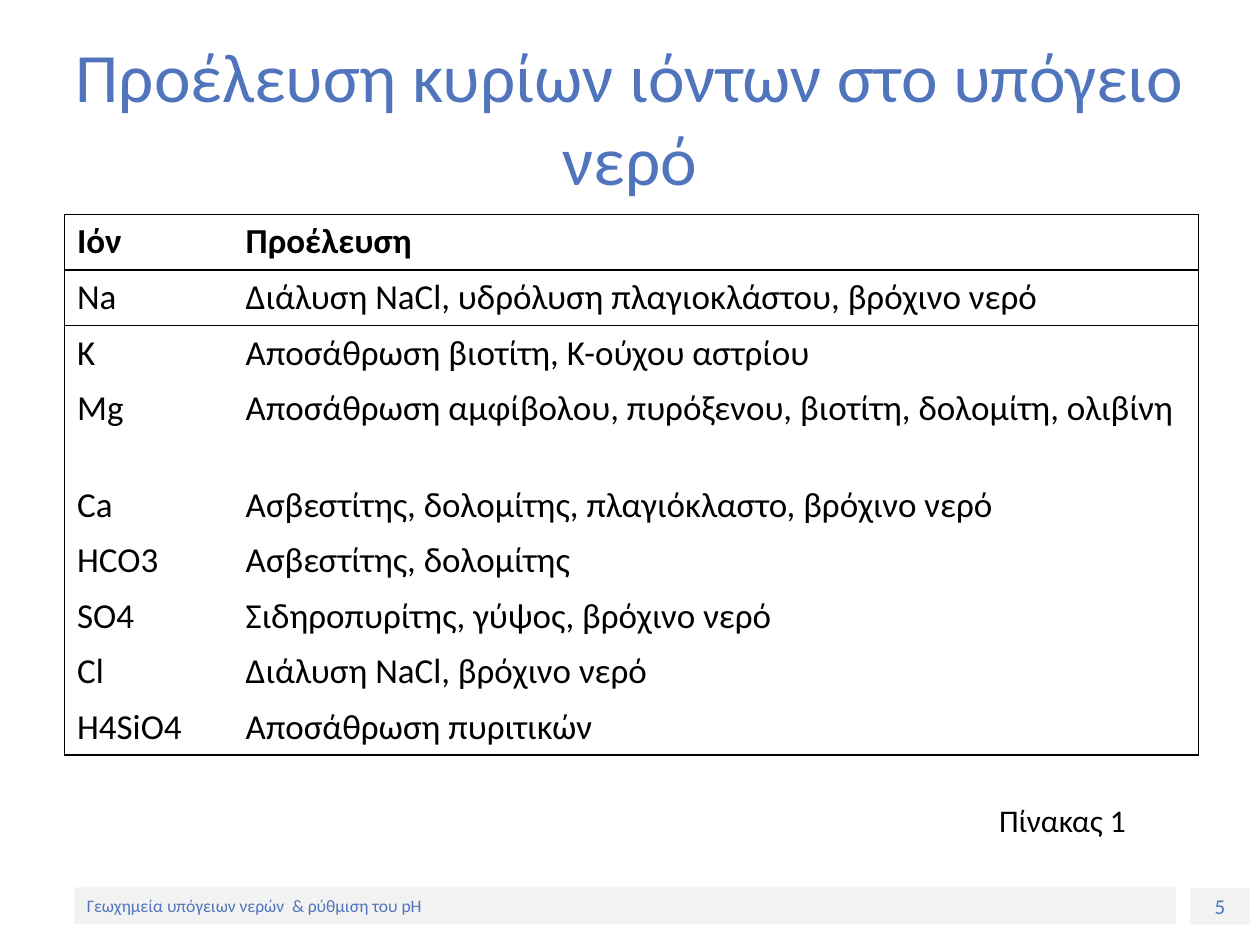
from dataclasses import dataclass

import pptx
import pptx.dml.color
import pptx.enum.shapes
import pptx.enum.text
import pptx.oxml
import pptx.oxml.ns
import pptx.util
from pptx.util import Cm

ALIGN = pptx.enum.text.PP_ALIGN
MIDDLE = pptx.enum.text.MSO_ANCHOR.MIDDLE


@dataclass(frozen=True)
class Theme:
    font: str = "Calibri"
    accent: str = "5075BC"
    text: str = "000000"
    band: str = "F2F2F2"
    title_size: float = 39.6
    table_size: float = 20
    caption_size: float = 18
    number_size: float = 12
    footer_size: float = 10
    border_width: float = 1


@dataclass(frozen=True)
class Box:
    left: float
    top: float
    width: float
    height: float

    def lengths(self) -> tuple:
        return Cm(self.left), Cm(self.top), Cm(self.width), Cm(self.height)


@dataclass(frozen=True)
class Band:
    text: str
    box: Box
    size: float
    alignment: ALIGN


@dataclass(frozen=True)
class Ion:
    name: str
    origin: str
    height: float = 1.1
    heading: bool = False
    ruled: bool = False


THEME = Theme()
TITLE_BOX = Box(1.27, 0.76, 22.86, 3.18)
TABLE_BOX = Box(1.3, 4.32, 22.86, 10.74)
CAPTION_BOX = Box(19.89, 15.93, 3.81, 1.19)
COLUMN_WIDTHS = (3.4, 19.46)

BANDS = (
    Band("5", Box(24, 17.9, 1.19, 0.74), THEME.number_size, ALIGN.CENTER),
    Band("Γεωχημεία υπόγειων νερών  & ρύθμιση του pH",
         Box(1.5, 17.89, 22.2, 0.74), THEME.footer_size, ALIGN.LEFT),
)

IONS = (
    Ion("Ιόν", "Προέλευση", heading=True, ruled=True),
    Ion("Na", "Διάλυση NaCl, υδρόλυση πλαγιοκλάστου, βρόχινο νερό", ruled=True),
    Ion("K", "Αποσάθρωση βιοτίτη, Κ-ούχου αστρίου"),
    Ion("Mg", "Αποσάθρωση αμφίβολου, πυρόξενου, βιοτίτη, δολομίτη, ολιβίνη",
        height=1.95),
    Ion("Ca", "Ασβεστίτης, δολομίτης, πλαγιόκλαστο, βρόχινο νερό"),
    Ion("HCO3", "Ασβεστίτης, δολομίτης"),
    Ion("SO4", "Σιδηροπυρίτης, γύψος, βρόχινο νερό"),
    Ion("Cl", "Διάλυση NaCl, βρόχινο νερό"),
    Ion("H4SiO4", "Αποσάθρωση πυριτικών", ruled=True),
)


def set_text(text_frame, text: str, size: float, color: str,
             alignment: ALIGN = ALIGN.LEFT, bold: bool = False) -> None:
    text_frame.text = text
    paragraph = text_frame.paragraphs[0]
    paragraph.alignment = alignment
    for run in paragraph.runs:
        run.font.name = THEME.font
        run.font.size = pptx.util.Pt(size)
        run.font.bold = bold
        run.font.color.rgb = pptx.dml.color.RGBColor.from_string(color)


def set_borders(cell, edges: dict[str, bool]) -> None:
    """Draw the edges marked true and hide the others."""
    properties = cell._tc.get_or_add_tcPr()
    width = pptx.util.Pt(THEME.border_width)
    for index, (edge, visible) in enumerate(edges.items()):
        paint = (f'<a:solidFill><a:srgbClr val="{THEME.text}"/></a:solidFill>'
                 if visible else "<a:noFill/>")
        line = pptx.oxml.parse_xml(
            f'<a:ln{edge} {pptx.oxml.ns.nsdecls("a")} w="{width}">'
            f"{paint}</a:ln{edge}>")
        properties.insert(index, line)


def add_band(slide, band: Band) -> None:
    shape = slide.shapes.add_shape(
        pptx.enum.shapes.MSO_SHAPE.RECTANGLE, *band.box.lengths())
    shape.shadow.inherit = False
    shape.fill.solid()
    shape.fill.fore_color.rgb = pptx.dml.color.RGBColor.from_string(THEME.band)
    shape.line.fill.background()
    shape.text_frame.vertical_anchor = MIDDLE
    set_text(shape.text_frame, band.text, band.size, THEME.accent,
             band.alignment)


def add_title(slide, text: str) -> None:
    title = slide.shapes.title
    title.left, title.top, title.width, title.height = TITLE_BOX.lengths()
    title.text_frame.vertical_anchor = MIDDLE
    set_text(title.text_frame, text, THEME.title_size, THEME.accent,
             ALIGN.CENTER)


def add_ion_table(slide, ions: tuple[Ion, ...]) -> None:
    table = slide.shapes.add_table(
        len(ions), len(COLUMN_WIDTHS), *TABLE_BOX.lengths()).table
    table.first_row = False
    table.horz_banding = False
    for column, width in zip(table.columns, COLUMN_WIDTHS):
        column.width = Cm(width)
    for row_index, ion in enumerate(ions):
        table.rows[row_index].height = Cm(ion.height)
        ruled_above = row_index == 0 or ions[row_index - 1].ruled
        for column_index, text in enumerate((ion.name, ion.origin)):
            cell = table.cell(row_index, column_index)
            cell.fill.background()
            set_text(cell.text_frame, text, THEME.table_size, THEME.text,
                     bold=ion.heading)
            set_borders(cell, {"L": column_index == 0,
                               "R": column_index == 1,
                               "T": ruled_above, "B": ion.ruled})


def add_caption(slide, text: str) -> None:
    caption = slide.shapes.add_textbox(*CAPTION_BOX.lengths())
    caption.text_frame.word_wrap = True
    caption.text_frame.vertical_anchor = MIDDLE
    set_text(caption.text_frame, text, THEME.caption_size, THEME.text)


def main() -> None:
    presentation = pptx.Presentation()
    presentation.slide_width = Cm(25.4)
    presentation.slide_height = Cm(19.05)
    slide = presentation.slides.add_slide(presentation.slide_layouts[5])

    # Footer and slide number
    for band in BANDS:
        add_band(slide, band)

    # Title, table and caption
    add_title(slide, "Προέλευση κυρίων ιόντων στο υπόγειο νερό")
    add_ion_table(slide, IONS)
    add_caption(slide, "Πίνακας 1")

    presentation.save("out.pptx")


if __name__ == "__main__":
    main()
